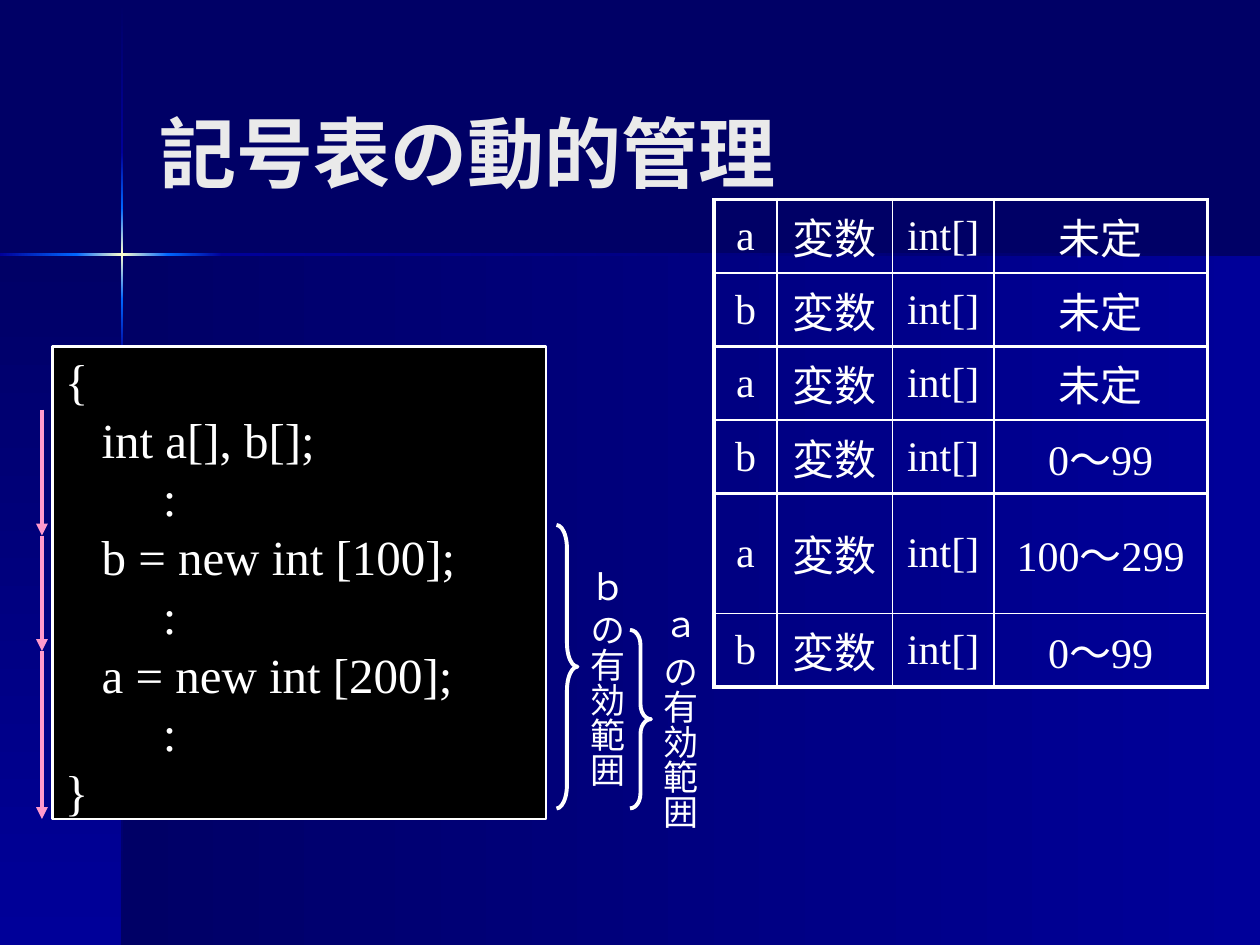
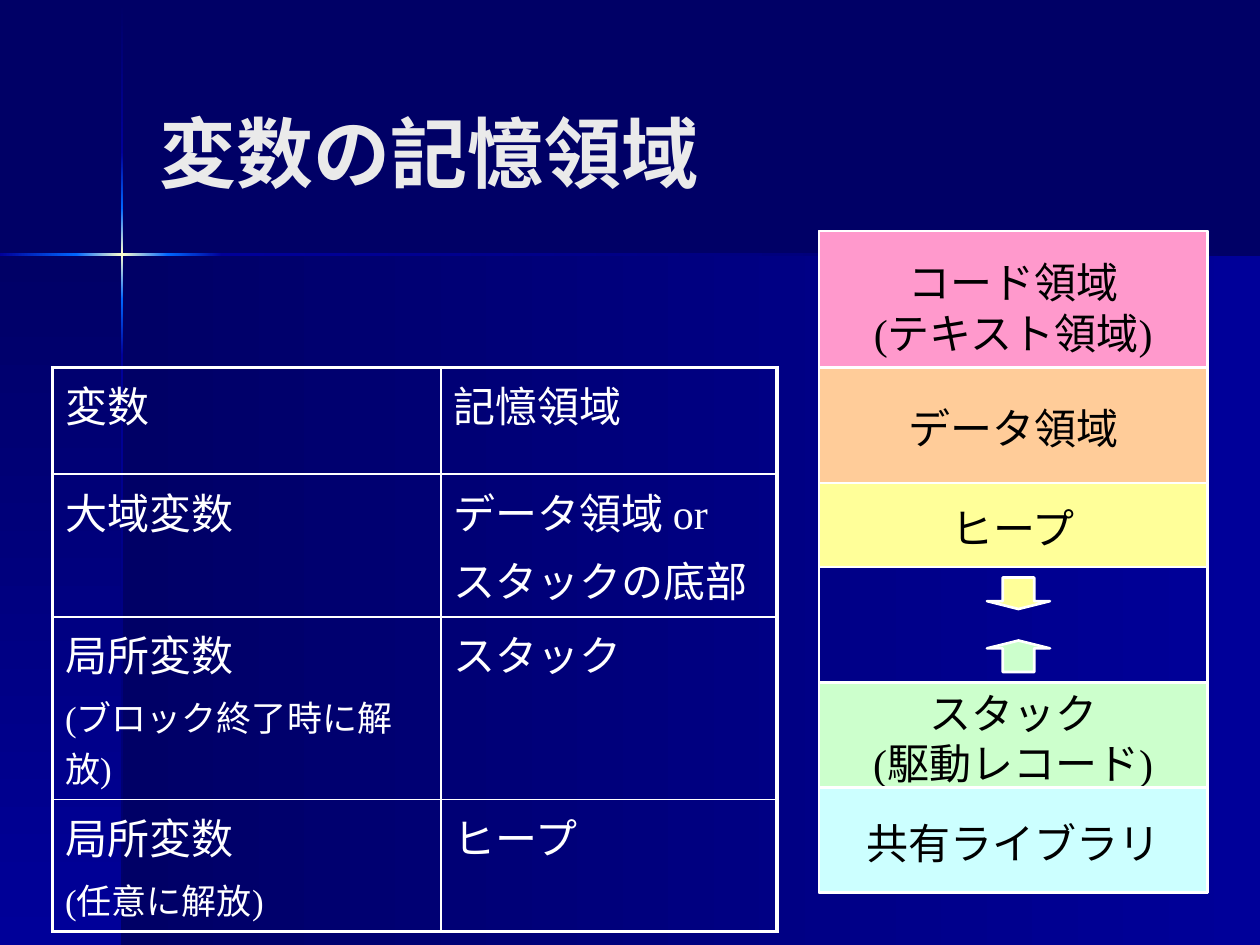
from itertools import accumulate, pairwise

from lxml.etree import SubElement as Sub
from pptx import Presentation
from pptx.dml.color import RGBColor as RGB
from pptx.enum.shapes import MSO_CONNECTOR as Link, MSO_SHAPE as Form
from pptx.enum.text import MSO_ANCHOR as Anchor, PP_ALIGN as Align
from pptx.oxml import parse_xml
from pptx.oxml.ns import nsdecls, qn
from pptx.util import Pt

FONT = "Times New Roman"
HEX = {
    "night": "000066", "navy": "000099", "blue": "0066FF", "cream": "FFFFCC",
    "title": "EAEAEA", "white": "FFFFFF", "black": "000000",
    "pink": "FF99CC", "peach": "FFCC99", "yellow": "FFFF99",
    "green": "CCFFCC", "cyan": "CCFFFF",
}


def rgb(name):
    return RGB.from_string(HEX[name])


class Deck:
    def __init__(self):
        self.prs = Presentation()
        self.prs.slide_width, self.prs.slide_height = Pt(720), Pt(540)
        self.layout = self.prs.slide_layouts[5]
        fill = self.layout.background.fill
        fill.solid()
        fill.fore_color.rgb = rgb("night")
        self.slide = None

    def new(self, title):
        """Start a slide with its title."""
        first = self.slide is None
        self.slide = self.prs.slides.add_slide(self.layout)
        if first:
            self.base()
        box = self.slide.shapes.title
        box.left, box.top, box.width, box.height = map(Pt, (84, 4, 558, 113))
        frame = box.text_frame
        frame.vertical_anchor = Anchor.BOTTOM
        frame.text = title
        self.style(frame.paragraphs[0], 44, "title", Align.LEFT)
        frame.paragraphs[0].font.bold = True

    def style(self, para, size, color="white", align=Align.LEFT):
        para.alignment = align
        font = para.font
        font.name, font.size = FONT, Pt(size)
        font.color.rgb = rgb(color)

    def base(self):
        """Put the two panels and the glowing cross on the layout."""
        self.band((70, 145.5, 650, 394.5), ("night", "navy"), 0)
        self.band((0, 145.5, 70, 394.5), ("night", "navy"), 90)
        glow = [("night", "navy"), ("navy", "blue"), ("blue", "cream", "blue"),
                ("blue", "navy"), ("navy", "night")]
        rows = pairwise((1, 87, 119, 171, 203, 540))
        for (top, end), tones in zip(rows, glow):
            self.band((69.2, top, 1.4, end - top), tones, 90)
        cols = pairwise((0, 43.5, 96, 127, 720))
        for (left, end), tones in zip(cols, glow[1:]):
            self.band((left, 144.7, end - left, 1.4), tones, 0)

    def band(self, at, tones, angle):
        shape = self.shape(Form.RECTANGLE, at, width=0)
        shape.element.spPr.remove(shape.element.spPr.find(qn("a:noFill")))
        step = 100000 // (len(tones) - 1)
        stops = "".join(
            f'<a:gs pos="{i * step}"><a:srgbClr val="{HEX[tone]}"/></a:gs>'
            for i, tone in enumerate(tones))
        shape.element.spPr.insert(2, parse_xml(
            f'<a:gradFill {nsdecls("a")} rotWithShape="1"><a:gsLst>{stops}'
            f'</a:gsLst><a:lin ang="{angle * 60000}" scaled="0"/></a:gradFill>'))
        self.layout.shapes.element.append(shape.element)

    def shape(self, form, at, fill=None, width=1.5, adj=()):
        shape = self.slide.shapes.add_shape(form, *map(Pt, at))
        shape.shadow.inherit = False
        if fill:
            shape.fill.solid()
            shape.fill.fore_color.rgb = rgb(fill)
        else:
            shape.fill.background()
        if width:
            shape.line.color.rgb = rgb("white")
            shape.line.width = Pt(width)
        else:
            shape.line.fill.background()
        for i, value in enumerate(adj):
            shape.adjustments[i] = value
        return shape

    def box(self, at, fill, lines, size, color, align):
        """Draw a filled box; each line is a text and its indent."""
        frame = self.shape(Form.RECTANGLE, at, fill).text_frame
        frame.word_wrap = True
        frame.vertical_anchor = Anchor.MIDDLE
        frame.margin_top, frame.margin_bottom = Pt(3), 0
        frame.text = "\n".join(text for text, _ in lines)
        for para, (_, indent) in zip(frame.paragraphs, lines):
            self.style(para, size, color, align)
            para.line_spacing = Pt(size * 1.2)
            if indent:
                para._p.get_or_add_pPr().set("marL", str(Pt(indent)))

    def scope(self, text, at, brace, adj):
        """Draw a brace with its vertical label."""
        frame = self.slide.shapes.add_textbox(*map(Pt, at)).text_frame
        frame.word_wrap = False
        frame._txBody.bodyPr.set("vert", "eaVert")
        frame.text = text
        self.style(frame.paragraphs[0], 20)
        self.shape(Form.RIGHT_BRACE, brace, width=2.25, adj=(adj, 0.5))

    def arrow(self, x, top, end):
        line = self.slide.shapes.add_connector(
            Link.STRAIGHT, Pt(x), Pt(top), Pt(x), Pt(end))
        line.line.color.rgb = rgb("pink")
        line.line.width = Pt(2.25)
        props = line.element.spPr
        Sub(props.find(qn("a:ln")), qn("a:tailEnd"), type="triangle")
        Sub(props, qn("a:effectLst"))

    def table(self, left, top, cols, rows, cells, align, anchor):
        """Draw a grid; lines after the first in a marked cell may be small."""
        grid = self.slide.shapes.add_table(
            len(rows), len(cols), Pt(left), Pt(top),
            Pt(sum(cols)), Pt(sum(rows))).table
        grid.first_row = grid.horz_banding = False
        for col, width in zip(grid.columns, cols):
            col.width = Pt(width)
        for row, height in zip(grid.rows, rows):
            row.height = Pt(height)
        for r, texts in enumerate(cells):
            for c, text in enumerate(texts):
                cell = grid.cell(r, c)
                cell.fill.background()
                cell.vertical_anchor = anchor
                cell.text = text
                for para in cell.text_frame.paragraphs:
                    small = para.text.startswith("(")
                    self.style(para, 20 if small else 24, align=align)
                    para.space_before = Pt(4)
                self.edges(cell, {
                    "L": c == 0, "R": c == len(cols) - 1,
                    "T": r == 0, "B": r == len(rows) - 1})

    def edges(self, cell, outer):
        props = cell._tc.get_or_add_tcPr()
        for i, (side, thick) in enumerate(outer.items()):
            width = Pt(2.25 if thick else 1)
            props.insert(i, parse_xml(
                f'<a:ln{side} {nsdecls("a")} w="{width}"><a:solidFill>'
                f'<a:srgbClr val="{HEX["white"]}"/></a:solidFill></a:ln{side}>'))


def symbols(deck):
    deck.new("記号表の動的管理")

    # Code
    code = [("{", 0), ("int a[], b[];", 21), (":", 56),
            ("b = new int [100];", 21), (":", 56),
            ("a = new int [200];", 21), (":", 56), ("}", 0)]
    deck.box((30, 198, 282, 270), "black", code, 28, "white", Align.LEFT)

    # Scopes
    deck.scope("ｂ の有効範囲", (324, 318, 38, 127), (318, 300, 12, 162), 1.13)
    deck.scope("ａ の有効範囲", (366, 342, 38, 123), (360, 360, 12, 102), 0.71)

    # Steps of the run
    for top, end in pairwise((234, 306, 372, 468)):
        deck.arrow(24, top, end)

    # Symbol table at each step
    states = [("未定", "未定"), ("未定", "0～99"), ("100～299", "0～99")]
    for i, state in enumerate(states):
        cells = [(name, "変数", "int[]", size)
                 for name, size in zip("ab", state)]
        rows = (68 if i == 2 else 42, 42)
        deck.table(408, 114 + 84 * i, (36, 66, 58, 122), rows, cells,
                   Align.CENTER, Anchor.MIDDLE)


def memory(deck):
    deck.new("変数の記憶領域")

    # Memory map
    left, wide = 468, 222
    deck.shape(Form.RECTANGLE, (left, 132, wide, 378))
    areas = [
        (132, 84, "pink", ("コード領域", "(テキスト領域)")),
        (210, 66, "peach", ("データ領域",)),
        (276, 48, "yellow", ("ヒープ",)),
        (390, 60, "green", ("スタック", "(駆動レコード)")),
        (450, 60, "cyan", ("共有ライブラリ",)),
    ]
    for top, high, fill, texts in areas:
        deck.box((left, top, wide, high), fill, [(t, 0) for t in texts],
                 24, "black", Align.CENTER)

    # Directions of growth
    for form, top, fill in ((Form.DOWN_ARROW, 330, "yellow"),
                            (Form.UP_ARROW, 366, "green")):
        deck.shape(form, (564, top, 36, 18), fill, adj=(0.5, 0.25))

    # Where each variable lives
    cells = [
        ("変数", "記憶領域"),
        ("大域変数", "データ領域 or\nスタックの底部"),
        ("局所変数\n(ブロック終了時に解放)", "スタック"),
        ("局所変数\n(任意に解放)", "ヒープ"),
    ]
    deck.table(30, 210, (222, 192), (61, 81.5, 104.5, 75.5), cells,
               Align.LEFT, Anchor.TOP)


def main():
    deck = Deck()
    symbols(deck)
    memory(deck)
    deck.prs.save("out.pptx")


if __name__ == "__main__":
    main()
